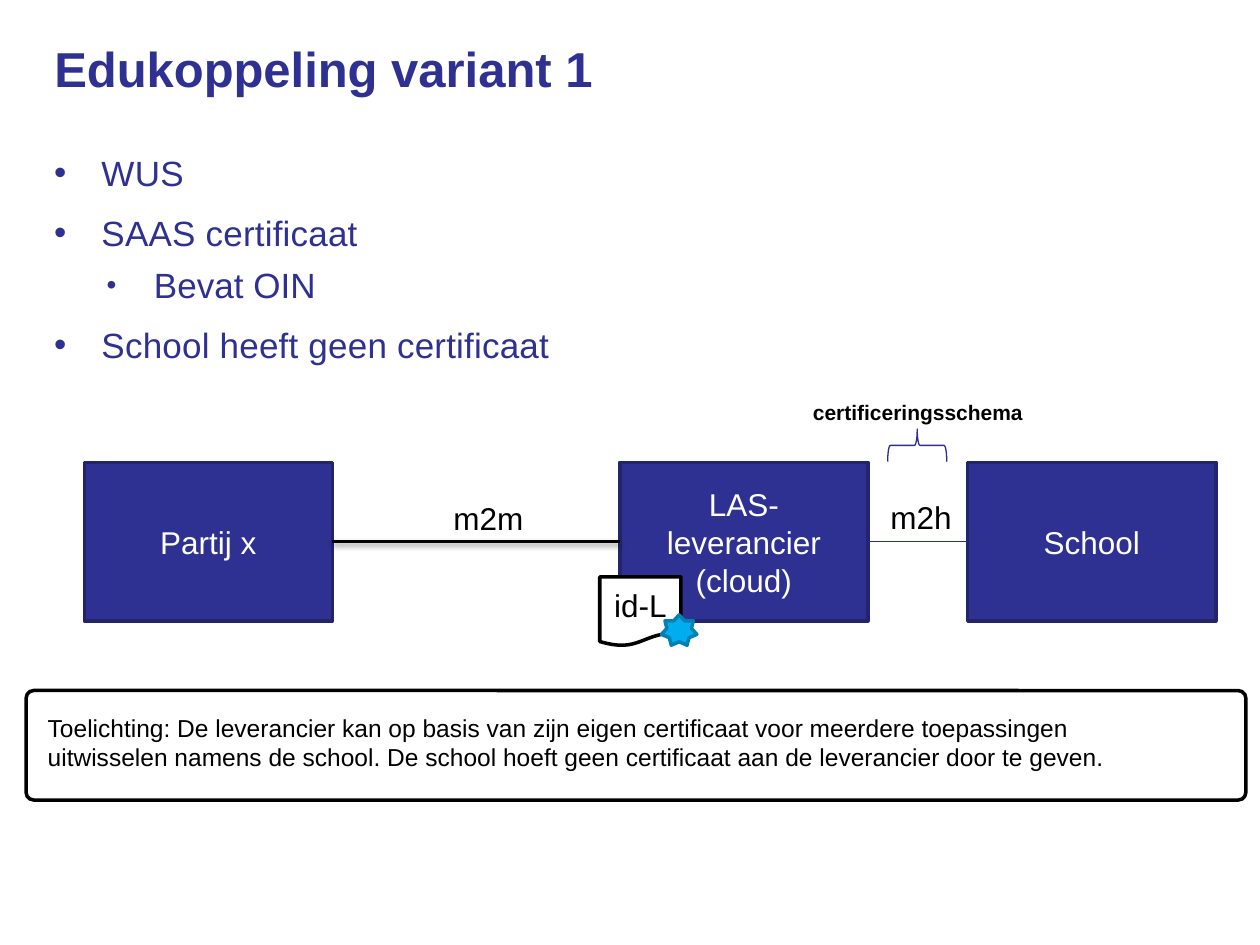
import pptx
import pptx.util
import pptx.dml.color
import pptx.enum.shapes
import pptx.enum.text
import pptx.oxml
import pptx.oxml.ns
from lxml import etree

Pt = pptx.util.Pt
Kind = pptx.enum.shapes.MSO_SHAPE
Align = pptx.enum.text.PP_ALIGN
Anchor = pptx.enum.text.MSO_ANCHOR
hues = {"blue": "2E3192", "edge": "22246C", "wire": "2B2E91", "black": "000000",
        "white": "FFFFFF", "sky": "00AEEF", "rim": "0081B1"}


def tint(name):
    return pptx.dml.color.RGBColor.from_string(hues[name])


def write(frame, lines, hue, size, align=Align.LEFT, bold=False):
    """Fill the frame with one evenly formatted paragraph per line."""
    frame.word_wrap = True
    for i, line in enumerate(lines):
        para = frame.paragraphs[0] if i == 0 else frame.add_paragraph()
        para.alignment = align
        run = para.add_run()
        run.text = line
        run.font.color.rgb = tint(hue)
        for key, val in {"name": "Arial", "size": Pt(size), "bold": bold}.items():
            setattr(run.font, key, val)


deck = pptx.Presentation()
deck.slide_width, deck.slide_height = Pt(720), Pt(540)
slide = deck.slides.add_slide(deck.slide_layouts[5])
shapes = slide.shapes
flush = {"margin_left": 0, "margin_top": 0, "margin_right": 0, "margin_bottom": 0,
         "vertical_anchor": Anchor.TOP}

# Title
title = shapes.title
place = {"left": 31, "top": 23.8, "width": 652.3, "height": 46}
for key, val in place.items():
    setattr(title, key, Pt(val))
write(title.text_frame, ["Edukoppeling variant 1"], "blue", 28, bold=True)
title.text_frame.paragraphs[0].line_spacing = Pt(32)

# Bullet list: text, level, left margin, line height, bullet size, tracking
points = [("WUS", 0, 27, 28, 100, 10),
          ("SAAS certificaat", 0, 27, 28, 100, 10),
          ("Bevat OIN", 1, 57, 24, 80, 0),
          ("School heeft geen certificaat", 0, 27, 28, 100, 10)]
body = shapes.add_textbox(Pt(31), Pt(82.8), Pt(652.3), Pt(396.7))
write(body.text_frame, [point[0] for point in points], "blue", 20)
for para, (text, level, left, high, dot, track) in zip(body.text_frame.paragraphs, points):
    para.level = level
    para.line_spacing = Pt(high)
    para.space_before = Pt(0 if para.text == points[0][0] else 6)
    props = para._p.get_or_add_pPr()
    props.set("marL", str(Pt(left)))
    props.set("indent", str(-Pt(27)))
    color = etree.SubElement(props, pptx.oxml.ns.qn("a:buClr"))
    etree.SubElement(color, pptx.oxml.ns.qn("a:srgbClr"), val=hues["blue"])
    etree.SubElement(props, pptx.oxml.ns.qn("a:buSzPct"), val=str(dot * 1000))
    etree.SubElement(props, pptx.oxml.ns.qn("a:buFont"), typeface="Arial")
    etree.SubElement(props, pptx.oxml.ns.qn("a:buChar"), char="•")
    para.runs[0].font._element.set("spc", str(track))
for frame in (title.text_frame, body.text_frame):
    for key, val in flush.items():
        setattr(frame, key, val)

# Parties, certificate, seal, note frame and brace
box = (264.2, 141.8, 90.7)
top, wide, high = box
forms = [
    (Kind.RECTANGLE, 354.2, *box, "blue", "edge", 2, ["LAS-leverancier", "(cloud)"], "white"),
    (Kind.FLOWCHART_DOCUMENT, 342.7, 329.6, 46.4, 39.6, "white", "black", 2, ["id-L"], "black"),
    (Kind.STAR_7_POINT, 378, 351.4, 20.2, 17.3, "sky", "rim", 2, [], None),
    (Kind.RECTANGLE, 48.2, *box, "blue", "edge", 2, ["Partij x"], "white"),
    (Kind.RECTANGLE, 553, *box, "blue", "edge", 2, ["School"], "white"),
    (Kind.ROUNDED_RECTANGLE, 14.9, 394.6, 697, 62.6, "white", "black", 2, [], None),
    (Kind.RIGHT_BRACE, 514.8, 237.6, 18.7, 33.8, None, "wire", 0.75, [], None),
]
for kind, x, y, w, h, fill, edge, thick, lines, ink in forms:
    form = shapes.add_shape(kind, Pt(x), Pt(y), Pt(w), Pt(h))
    form.shadow.inherit = False
    if fill:
        form.fill.solid()
        form.fill.fore_color.rgb = tint(fill)
    else:
        form.fill.background()
    form.line.color.rgb = tint(edge)
    form.line.width = Pt(thick)
    if lines:
        form.text_frame.vertical_anchor = Anchor.MIDDLE
        write(form.text_frame, lines, ink, 18, Align.CENTER)
    if kind == Kind.ROUNDED_RECTANGLE:
        form.adjustments[0] = 0.07
    if kind == Kind.RIGHT_BRACE:
        form.rotation = 270

# Links between the parties; the first casts a soft shadow
shade = ('<a:outerShdw blurRad="40000" dist="20000" dir="5400000" rotWithShape="0">'
         '<a:srgbClr val="000000"><a:alpha val="38000"/></a:srgbClr></a:outerShdw>')
mid = top + high / 2
for start, end, hue, thick, effect in [(48.2 + wide, 354.2, "black", 2, shade),
                                       (354.2 + wide, 553, "wire", 0.75, "")]:
    link = shapes.add_connector(pptx.enum.shapes.MSO_CONNECTOR.STRAIGHT,
                                Pt(start), Pt(mid), Pt(end), Pt(mid))
    link.line.color.rgb = tint(hue)
    link.line.width = Pt(thick)
    link._element.spPr.append(pptx.oxml.parse_xml(
        f'<a:effectLst {pptx.oxml.ns.nsdecls("a")}>{effect}</a:effectLst>'))

# Labels and explanation
note = ("Toelichting: De leverancier kan op basis van zijn eigen certificaat voor meerdere "
        "toepassingen uitwisselen namens de school. De school hoeft geen certificaat aan de "
        "leverancier door te geven.")
labels = [(note, 20.2, 403.9, 645.1, 41, 14, Align.LEFT, False),
          ("certificeringsschema", 456.5, 224.6, 136.1, 21.6, 12, Align.CENTER, True),
          ("m2m", 252, 281.5, 62.6, 28.8, 18, Align.LEFT, False),
          ("m2h", 501.8, 280.8, 62.6, 28.8, 18, Align.LEFT, False)]
for text, x, y, w, h, size, align, bold in labels:
    label = shapes.add_textbox(Pt(x), Pt(y), Pt(w), Pt(h))
    write(label.text_frame, [text], "black", size, align, bold)
    label.text_frame.auto_size = pptx.enum.text.MSO_AUTO_SIZE.SHAPE_TO_FIT_TEXT

deck.save("out.pptx")
